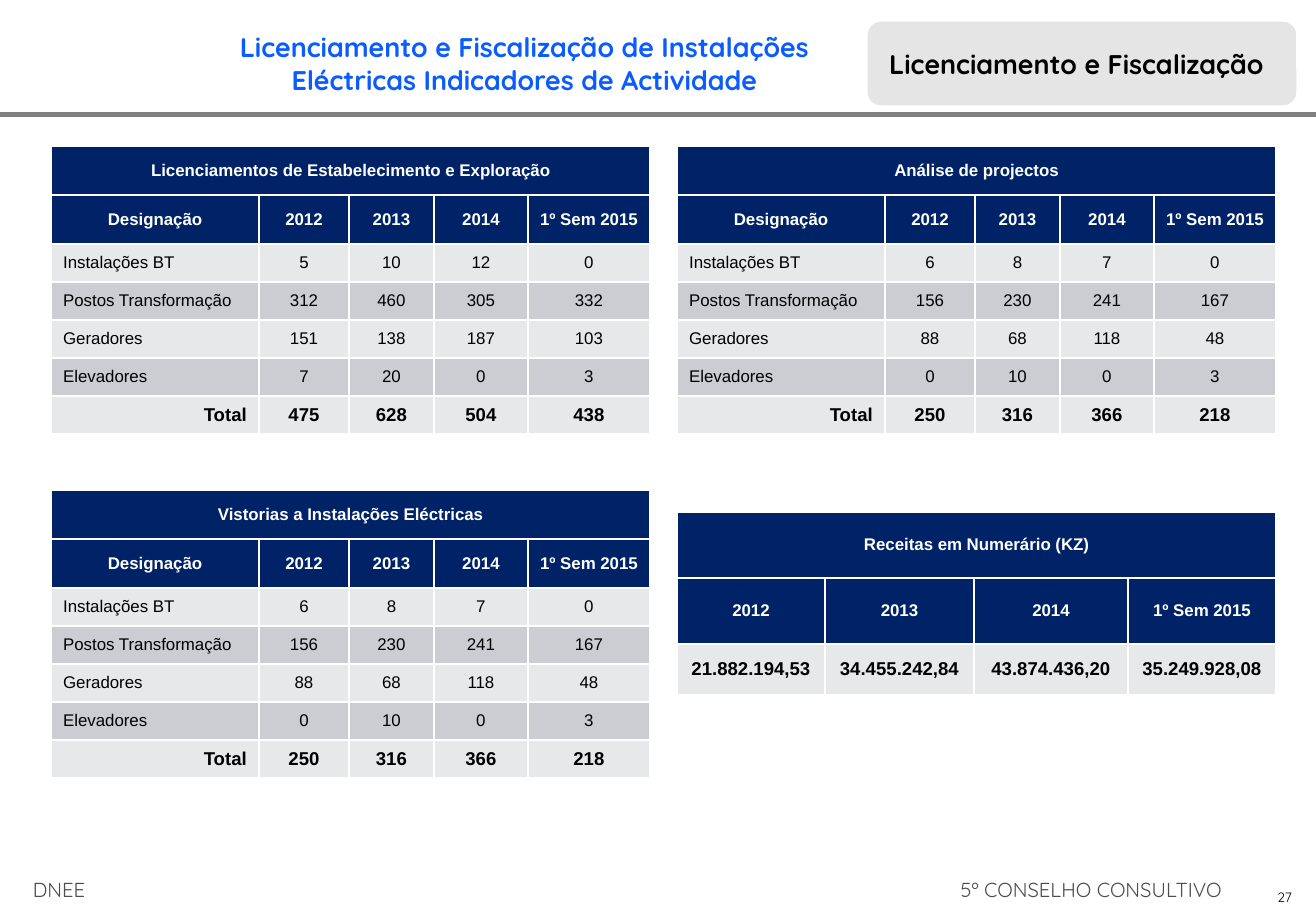
from lxml import etree
from pptx import Presentation
from pptx.dml.color import RGBColor
from pptx.enum.shapes import MSO_SHAPE
from pptx.enum.text import MSO_ANCHOR, PP_ALIGN
from pptx.oxml.ns import qn
from pptx.util import Pt

PX = 7526
LEFT, CENTER, RIGHT = PP_ALIGN.LEFT, PP_ALIGN.CENTER, PP_ALIGN.RIGHT
MIDDLE = MSO_ANCHOR.MIDDLE
RECTANGLE, ROUNDED = MSO_SHAPE.RECTANGLE, MSO_SHAPE.ROUNDED_RECTANGLE

WHITE = RGBColor(0xFF, 0xFF, 0xFF)
BLACK = RGBColor(0x00, 0x00, 0x00)
NAVY = RGBColor(0x00, 0x22, 0x66)
BLUE = RGBColor(0x0A, 0x5C, 0xFF)
RULE_GRAY = RGBColor(0x80, 0x80, 0x80)
BADGE_GRAY = RGBColor(0xD9, 0xD9, 0xD9)
FOOTER_GRAY = RGBColor(0x4D, 0x4D, 0x4D)
LIGHT_BAND = RGBColor(0xE7, 0xE8, 0xEA)
DARK_BAND = RGBColor(0xCC, 0xCD, 0xD3)

PERIODS = ["2012", "2013", "2014", "1º Sem 2015"]
INSTALLATIONS = ["Instalações BT", "Postos Transformação", "Geradores", "Elevadores"]
LICENCES = [[5, 10, 12, 0], [312, 460, 305, 332], [151, 138, 187, 103], [7, 20, 0, 3]]
PROJECTS = [[6, 8, 7, 0], [156, 230, 241, 167], [88, 68, 118, 48], [0, 10, 0, 3]]
INSPECTIONS = PROJECTS
REVENUES = ["21.882.194,53", "34.455.242,84", "43.874.436,20", "35.249.928,08"]
LEFT_COLUMN, RIGHT_COLUMN = 51, 677


class ReportSlide:
    heading_font = "Quicksand"
    table_font = "Arial"

    def __init__(self, presentation):
        self.slide = presentation.slides.add_slide(presentation.slide_layouts[6])

    def add_words(self, frame, text, size, color, bold=False, align=LEFT, font=heading_font):
        paragraph = frame.paragraphs[0]
        paragraph.alignment = align
        run = paragraph.add_run()
        run.text = text
        run.font.name = font
        run.font.size = Pt(size)
        run.font.bold = bold
        run.font.color.rgb = color
        return paragraph

    def text(self, x, y, width, height, text, size, color, bold=False, align=LEFT):
        box = self.slide.shapes.add_textbox(x * PX, y * PX, width * PX, height * PX)
        box.text_frame.word_wrap = True
        box.text_frame.vertical_anchor = MIDDLE
        return self.add_words(box.text_frame, text, size, color, bold, align)

    def tabbed_text(self, x, y, width, height, parts, tab, size, color):
        paragraph = self.text(x, y, width, height, "\t".join(parts), size, color)
        properties = paragraph._p.get_or_add_pPr()
        tabs = etree.SubElement(properties, qn("a:tabLst"))
        etree.SubElement(tabs, qn("a:tab"), pos=str(tab * PX), algn="r")

    def shape(self, kind, x, y, width, height, fill, line, line_width):
        shape = self.slide.shapes.add_shape(kind, x * PX, y * PX, width * PX, height * PX)
        shape.shadow.inherit = False
        shape.fill.solid()
        shape.fill.fore_color.rgb = fill
        shape.line.color.rgb = line
        shape.line.width = Pt(line_width)
        return shape

    def badge(self, x, y, width, height, text):
        badge = self.shape(ROUNDED, x, y, width, height, BADGE_GRAY, WHITE, 2)
        color = badge._element.spPr.find(qn("a:solidFill"))[0]
        etree.SubElement(color, qn("a:alpha"), val="67000")
        frame = badge.text_frame
        frame.margin_left, frame.margin_right = 19 * PX, 5 * PX
        frame.vertical_anchor = MIDDLE
        self.add_words(frame, text, 16, BLACK, True)

    def cell(self, cell, text, fill, size, color, bold, align):
        cell.fill.solid()
        cell.fill.fore_color.rgb = fill
        cell.vertical_anchor = MIDDLE
        properties = cell._tc.get_or_add_tcPr()
        for position, side in enumerate(("lnL", "lnR", "lnT", "lnB")):
            border = etree.Element(qn(f"a:{side}"), w=str(Pt(1)))
            solid = etree.SubElement(border, qn("a:solidFill"))
            etree.SubElement(solid, qn("a:srgbClr"), val=str(WHITE))
            properties.insert(position, border)
        if text:
            self.add_words(cell.text_frame, text, size, color, bold, align, self.table_font)

    def table(self, x, y, widths, heights, title, header, body, labelled):
        rows = [[title] + [""] * (len(widths) - 1), header] + body
        table = self.slide.shapes.add_table(
            len(rows), len(widths), x * PX, y * PX, sum(widths) * PX, sum(heights) * PX
        ).table
        for column, width in zip(table.columns, widths):
            column.width = width * PX
        for row, height in zip(table.rows, heights):
            row.height = height * PX
        table.cell(0, 0).merge(table.cell(0, len(widths) - 1))
        for r, values in enumerate(rows):
            is_header = r < 2
            is_total = r == len(rows) - 1
            fill = NAVY if is_header else (LIGHT_BAND, DARK_BAND)[r % 2]
            color = WHITE if is_header else BLACK
            for c, value in enumerate(values):
                align = CENTER
                if labelled and c == 0 and not is_header:
                    align = RIGHT if is_total else LEFT
                self.cell(table.cell(r, c), value, fill, 11 if is_total else 10,
                          color, is_header or is_total, align)

    def activity_table(self, x, y, title, counts):
        body = [[name] + [str(n) for n in row] for name, row in zip(INSTALLATIONS, counts)]
        body.append(["Total"] + [str(sum(column)) for column in zip(*counts)])
        self.table(x, y, [208, 90, 85, 94, 122], [49] * 2 + [38] * 5, title,
                   ["Designação"] + PERIODS, body, True)


def main():
    presentation = Presentation()
    presentation.slide_width = 1316 * PX
    presentation.slide_height = 911 * PX
    report = ReportSlide(presentation)

    report.shape(RECTANGLE, 0, 113, 1316, 3, RULE_GRAY, RULE_GRAY, 1)
    report.text(1197, 883, 107, 29, "27", 8, BLACK, align=RIGHT)
    report.tabbed_text(21, 871, 1254, 36, ["DNEE", "5º CONSELHO CONSULTIVO"],
                       1189, 12, FOOTER_GRAY)
    report.badge(866, 20, 432, 87, "Licenciamento e Fiscalização")
    report.text(183, 24, 683, 78,
                "Licenciamento e Fiscalização de Instalações Eléctricas Indicadores de Actividade",
                16, BLUE, True, CENTER)

    report.activity_table(LEFT_COLUMN, 146,
                          "Licenciamentos de Estabelecimento e Exploração", LICENCES)
    report.activity_table(RIGHT_COLUMN, 146, "Análise de projectos", PROJECTS)
    report.activity_table(LEFT_COLUMN, 490, "Vistorias a Instalações Eléctricas", INSPECTIONS)
    report.table(RIGHT_COLUMN, 512, [148, 149, 154, 148], [66, 66, 51],
                 "Receitas em Numerário (KZ)", PERIODS, [REVENUES], False)

    presentation.save("out.pptx")


if __name__ == "__main__":
    main()
